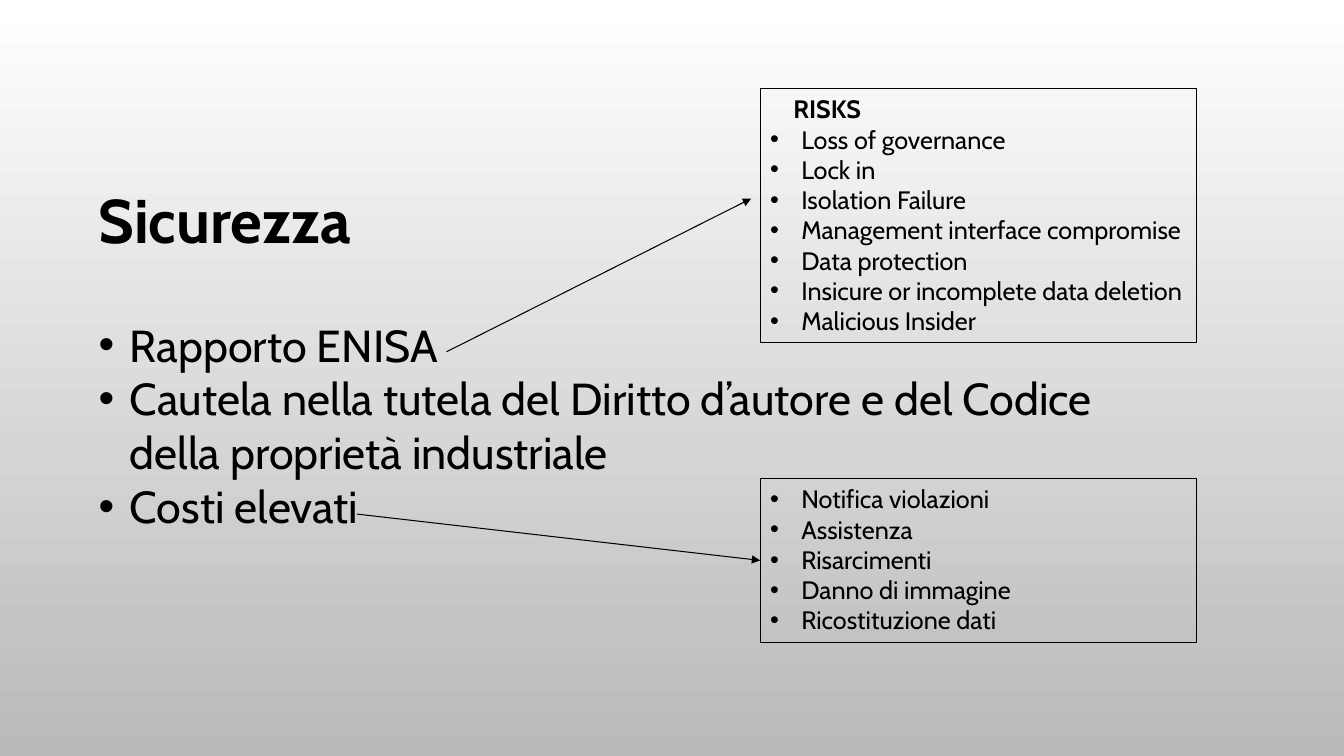
import pptx
import pptx.dml.color
import pptx.enum.shapes
import pptx.enum.text
import pptx.oxml.ns
import pptx.util
from dataclasses import dataclass
from lxml import etree


@dataclass
class Theme:
    face: str = "Cabin"
    ink: str = "000000"
    top: str = "FFFFFF"
    base: str = "B9B9B9"
    title: int = 44
    body: int = 32
    note: int = 18
    rule: float = 0.75
    hang: float = 0.31
    inset: float = 0.23


def color(code):
    return pptx.dml.color.RGBColor.from_string(code)


def child(node, tag, **attrs):
    return etree.SubElement(node, pptx.oxml.ns.qn(tag), attrs)


class Deck:
    """Places elements by percent of the slide's width and height."""

    def __init__(self, theme):
        self.theme = theme
        self.prs = pptx.Presentation()
        self.prs.slide_width = pptx.util.Inches(13.33)
        self.prs.slide_height = pptx.util.Inches(7.5)
        self.slide = self.prs.slides.add_slide(self.prs.slide_layouts[6])

    def spot(self, x, y):
        return (round(self.prs.slide_width * x / 100),
                round(self.prs.slide_height * y / 100))

    def shade(self):
        fill = self.slide.background.fill
        fill.gradient()
        fill.gradient_angle = 270
        for stop, code in zip(fill.gradient_stops, (self.theme.top, self.theme.base)):
            stop.color.rgb = color(code)

    def label(self, para, words, size, bold=False, dot=False, indent=0):
        para.text = words
        para.alignment = pptx.enum.text.PP_ALIGN.LEFT
        props = para._p.get_or_add_pPr()
        if dot:
            hang = pptx.util.Inches(self.theme.hang)
            props.set("marL", str(hang))
            props.set("indent", str(-hang))
            child(props, "a:buFont", typeface="Arial")
            child(props, "a:buChar", char="•")
        elif indent:
            props.set("marL", str(pptx.util.Inches(indent)))
        font = para.font
        font.name = self.theme.face
        font.size = pptx.util.Pt(size)
        font.bold = bold
        font.color.rgb = color(self.theme.ink)

    def fill(self, shape, items, size, head=None, inset=0):
        frame = shape.text_frame
        frame.word_wrap = True
        frame.vertical_anchor = pptx.enum.text.MSO_ANCHOR.TOP
        rows = [(head, False)] if head else []
        rows += [(item, True) for item in items]
        for i, (words, dot) in enumerate(rows):
            para = frame.add_paragraph() if i else frame.paragraphs[0]
            self.label(para, words, size, not dot, dot, inset)

    def text(self, x, y, w, h, size, items=(), head=None):
        box = self.slide.shapes.add_textbox(*self.spot(x, y), *self.spot(w, h))
        self.fill(box, items, size, head)

    def panel(self, x, y, w, h, items, head=None):
        box = self.slide.shapes.add_shape(
            pptx.enum.shapes.MSO_SHAPE.RECTANGLE, *self.spot(x, y), *self.spot(w, h))
        box.shadow.inherit = False
        box.fill.background()
        self.stroke(box.line)
        self.fill(box, items, self.theme.note, head, self.theme.inset)

    def stroke(self, line):
        line.color.rgb = color(self.theme.ink)
        line.width = pptx.util.Pt(self.theme.rule)

    def arrow(self, start, end):
        link = self.slide.shapes.add_connector(
            pptx.enum.shapes.MSO_CONNECTOR.STRAIGHT, *self.spot(*start), *self.spot(*end))
        self.stroke(link.line)
        child(link.line._get_or_add_ln(), "a:tailEnd", type="triangle")
        child(link._element.spPr, "a:effectLst")


def main():
    theme = Theme()
    deck = Deck(theme)
    deck.shade()

    # Title and main points
    left = 6.6
    deck.text(left, 23.47, 61.89, 11.2, theme.title, head="Sicurezza")
    deck.text(left, 41.33, 77.57, 30.13, theme.body, [
        "Rapporto ENISA",
        "Cautela nella tutela del Diritto d’autore e del Codice della proprietà industriale",
        "Costi elevati",
    ])

    # Risks named in the report
    side, wide = 56.56, 32.48
    deck.panel(side, 11.73, wide, 33.6, [
        "Loss of governance",
        "Lock in",
        "Isolation Failure",
        "Management interface compromise",
        "Data protection",
        "Insicure or incomplete data deletion",
        "Malicious Insider",
    ], head="RISKS")
    deck.arrow((33.23, 46.53), (55.89, 26.27))

    # Sources of cost
    deck.panel(side, 63.33, wide, 21.6, [
        "Notifica violazioni",
        "Assistenza",
        "Risarcimenti",
        "Danno di immagine",
        "Ricostituzione dati",
    ])
    deck.arrow((26.56, 68), (side, 74.13))

    deck.prs.save("out.pptx")


if __name__ == "__main__":
    main()
